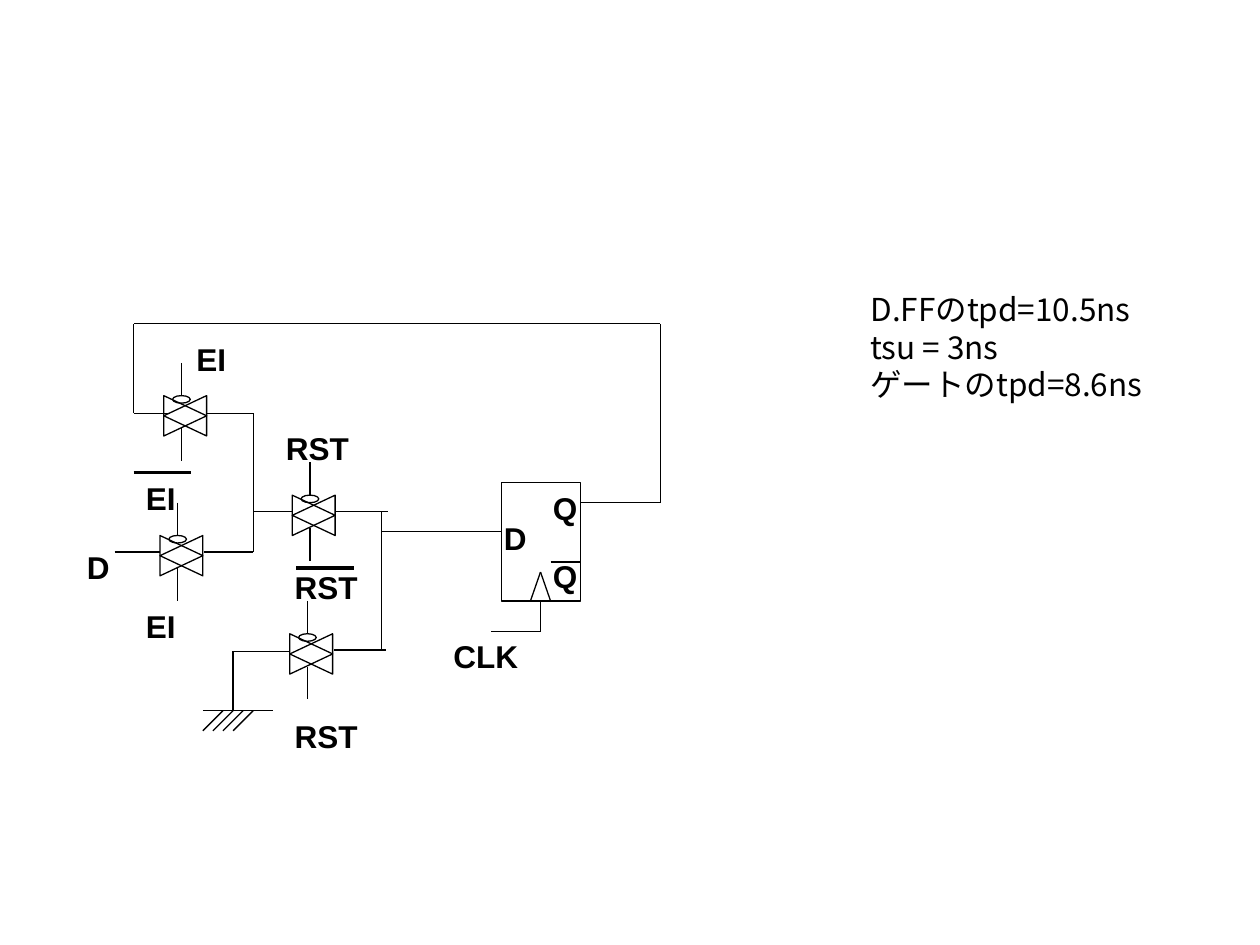
from dataclasses import dataclass
from itertools import pairwise

from lxml import etree
from pptx import Presentation
from pptx import util as u
from pptx.dml.color import RGBColor
from pptx.enum import shapes, text
from pptx.oxml.ns import qn


@dataclass(frozen=True)
class Theme:
    ink: RGBColor = RGBColor(0, 0, 0)
    label_font: str = "Arial"
    note_font: str = "Noto Sans CJK JP"
    text_size: int = 18
    thin: float = 0.75
    thick: float = 2.25


THEME = Theme()
GATE_WIDTH, GATE_HEIGHT = 0.34, 0.32
STEM = 0.26


def add_text(slide, lines, left, top, width, height=0.4, *, font=THEME.label_font,
             bold=True, wrap=False):
    box = slide.shapes.add_textbox(*map(u.Inches, (left, top, width, height)))
    frame = box.text_frame
    frame.word_wrap = wrap
    frame.auto_size = text.MSO_AUTO_SIZE.SHAPE_TO_FIT_TEXT
    for index, line in enumerate(lines):
        paragraph = frame.paragraphs[0] if index == 0 else frame.add_paragraph()
        run = paragraph.add_run()
        run.text = line
        run.font.name = font
        run.font.size = u.Pt(THEME.text_size)
        run.font.bold = bold
        run.font.color.rgb = THEME.ink
        # East Asian glyphs use the same typeface
        run.font._element.find(qn("a:latin")).addnext(
            etree.Element(qn("a:ea"), typeface=font))


def add_wire(slide, *points, weight=THEME.thin):
    """Join the points with straight lines."""
    for start, end in pairwise(points):
        line = slide.shapes.add_connector(
            shapes.MSO_CONNECTOR.STRAIGHT, *map(u.Inches, (*start, *end)))
        line.line.color.rgb = THEME.ink
        line.line.width = u.Pt(weight)
        etree.SubElement(line._element.spPr, qn("a:effectLst"))


def add_outline(slide, kind, left, top, width, height, rotation=0):
    shape = slide.shapes.add_shape(kind, *map(u.Inches, (left, top, width, height)))
    shape.rotation = rotation
    shape.shadow.inherit = False
    shape.fill.background()
    shape.line.color.rgb = THEME.ink
    shape.line.width = u.Pt(THEME.thin)


def add_gate(slide, left, top):
    """Transmission gate: two opposed triangles, a bubble and two control stems."""
    # The triangles are turned a quarter, so their frame swaps width and height
    inset = (GATE_WIDTH - GATE_HEIGHT) / 2
    for rotation in (90, 270):
        add_outline(slide, shapes.MSO_SHAPE.ISOSCELES_TRIANGLE, left + inset,
                    top - inset, GATE_HEIGHT, GATE_WIDTH, rotation)
    add_outline(slide, shapes.MSO_SHAPE.OVAL, left + 0.07, top, 0.14, 0.06)
    stem_x = left + 0.14
    for stem_top in (top - STEM, top + STEM):
        add_wire(slide, (stem_x, stem_top), (stem_x, stem_top + STEM))


def add_flip_flop(slide):
    add_outline(slide, shapes.MSO_SHAPE.RECTANGLE, 3.98, 3.83, 0.63, 0.94)
    add_text(slide, ["D"], 3.9, 4.07, 0.38)
    add_text(slide, ["Q"], 4.29, 3.83, 0.4)
    add_text(slide, ["Q"], 4.29, 4.37, 0.4)
    add_wire(slide, (4.37, 4.46), (4.61, 4.46))
    # Clock input
    add_wire(slide, (4.21, 4.77), (4.29, 4.54), (4.37, 4.77))
    add_wire(slide, (4.29, 4.77), (4.29, 5.01), (3.9, 5.01))
    add_text(slide, ["CLK"], 3.5, 5.01, 0.72)


def add_ground(slide):
    add_wire(slide, (2.3, 5.17), (1.85, 5.17), (1.85, 5.64))
    add_wire(slide, (1.61, 5.64), (2.17, 5.64))
    for index in range(4):
        x = 1.77 + 0.08 * index
        add_wire(slide, (x, 5.64), (x - 0.16, 5.8))


def main():
    presentation = Presentation()
    presentation.slide_width, presentation.slide_height = u.Inches(10), u.Inches(7.5)
    slide = presentation.slides.add_slide(presentation.slide_layouts[6])

    # Timing notes
    add_text(slide, ["D.FFのtpd=10.5ns", "tsu = 3ns", "ゲートのtpd=8.6ns"],
             6.81, 2.25, 2.4, 1.01, font=THEME.note_font, bold=False, wrap=True)

    # Components
    add_flip_flop(slide)
    for left, top in ((1.3, 3.14), (1.27, 4.25), (2.32, 3.93), (2.3, 5.03)):
        add_gate(slide, left, top)
    add_ground(slide)

    # Feedback from Q to the first gate
    add_wire(slide, (4.61, 3.99), (5.24, 3.99), (5.24, 2.57), (1.06, 2.57),
             (1.06, 3.28), (1.35, 3.28))
    # Input stage joined to the reset stage
    add_wire(slide, (0.91, 4.38), (1.27, 4.38))
    add_wire(slide, (1.64, 3.28), (2.01, 3.28), (2.01, 4.38), (1.62, 4.38))
    add_wire(slide, (2.01, 4.06), (2.32, 4.06))
    # Reset stage joined to the D input
    add_wire(slide, (2.67, 4.06), (3.08, 4.06))
    add_wire(slide, (2.65, 5.16), (3.06, 5.16))
    add_wire(slide, (3.03, 4.06), (3.03, 5.16))
    add_wire(slide, (3.03, 4.22), (3.98, 4.22))

    # Signal names
    for name, left, top, width in (
        ("D", 0.59, 4.3, 0.38),
        ("EI", 1.46, 2.65, 0.44),
        ("EI", 1.06, 3.75, 0.44),
        ("EI", 1.06, 4.77, 0.44),
        ("RST", 2.17, 3.36, 0.72),
        ("RST", 2.24, 4.46, 0.72),
        ("RST", 2.24, 5.64, 0.72),
    ):
        add_text(slide, [name], left, top, width)
    # Bars over the inverted signals
    for left, y in ((1.06, 3.75), (2.35, 4.51)):
        add_wire(slide, (left, y), (left + 0.46, y), weight=THEME.thick)

    presentation.save("out.pptx")


if __name__ == "__main__":
    main()
